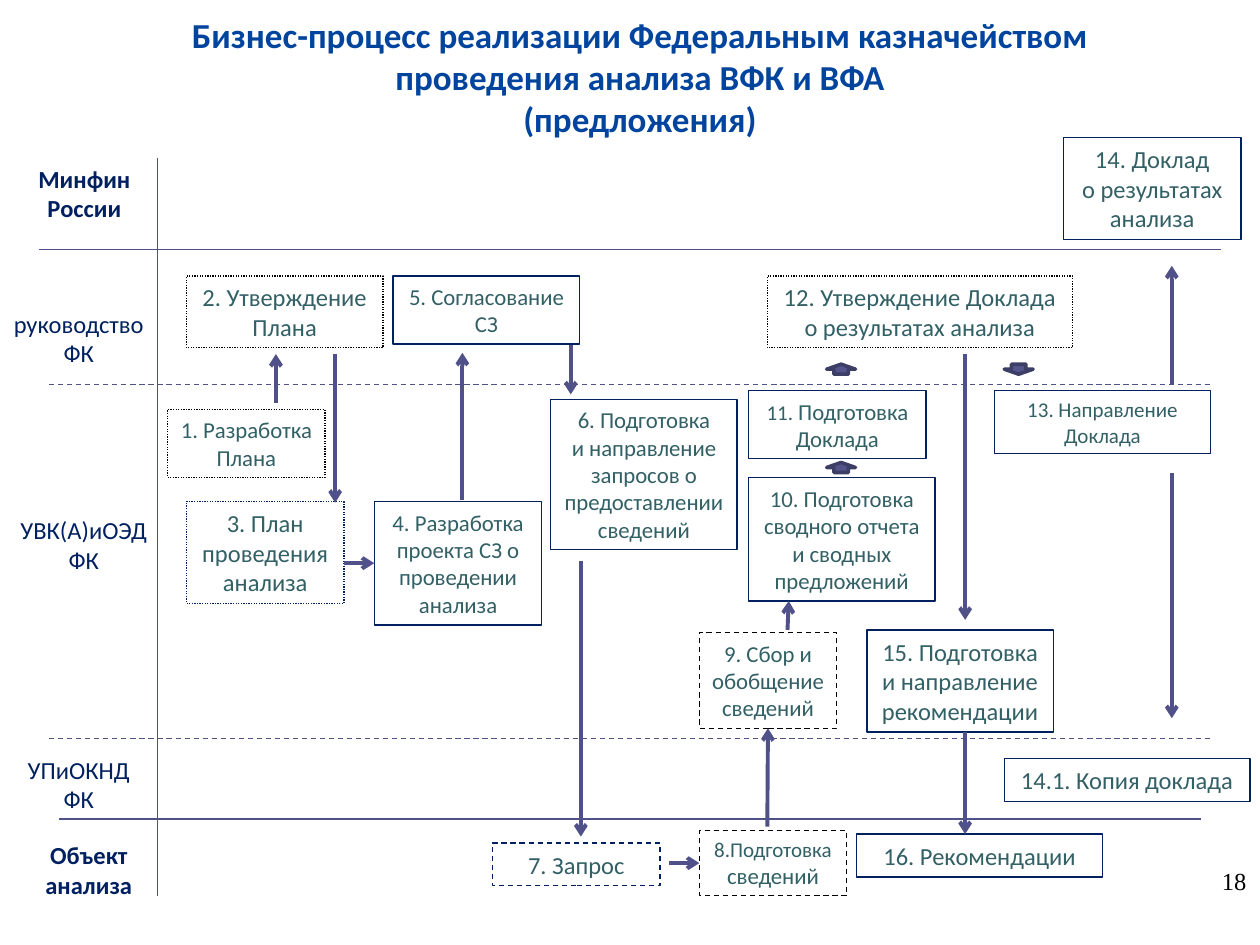
from lxml import etree
from pptx import Presentation
from pptx.dml.color import RGBColor
from pptx.enum import dml, shapes, text
from pptx.oxml.ns import qn
from pptx.util import Inches, Pt

TITLE, NAVY, TEAL, BLACK = "00449E", "002060", "326065", "000000"
LINE, ARROW_FILL, ARROW_EDGE = "505188", "53548A", "3D3E66"
DASH, DOT = dml.MSO_LINE.DASH, dml.MSO_LINE.ROUND_DOT
LEFT_SIDE, BOTTOM_SIDE = 1, 2


def rgb(value):
    return RGBColor.from_string(value)


def set_line(line, color, width, dash=None):
    line.color.rgb = rgb(color)
    line.width = Pt(width)
    if dash:
        line.dash_style = dash


def write(shape, words, size, color, bold=False, font="Calibri",
          align=text.PP_ALIGN.CENTER, anchor=text.MSO_ANCHOR.TOP):
    frame = shape.text_frame
    frame.word_wrap = True
    frame.vertical_anchor = anchor
    frame.text = words
    for paragraph in frame.paragraphs:
        paragraph.alignment = align
        for run in paragraph.runs:
            run.font.name = font
            run.font.size = Pt(size)
            run.font.bold = bold
            run.font.color.rgb = rgb(color)


def add_label(slide, box, words, size, color, **options):
    label = slide.shapes.add_textbox(*map(Inches, box))
    write(label, words, size, color, **options)
    return label


def add_line(slide, start, end, width=0.75, dash=None, arrow=False):
    line = slide.shapes.add_connector(
        shapes.MSO_CONNECTOR.STRAIGHT, *map(Inches, (*start, *end)))
    set_line(line.line, LINE, width, dash)
    if arrow:
        etree.SubElement(line.line._get_or_add_ln(), qn("a:tailEnd"), type="arrow")
    etree.SubElement(line._element.spPr, qn("a:effectLst"))
    return line


def add_header(slide, box):
    add_label(slide, box,
              "Бизнес-процесс реализации Федеральным казначейством "
              "проведения анализа ВФК и ВФА\v(предложения)",
              20, TITLE, bold=True)


def add_lanes(slide, box):
    left, top, width, height = box
    # Lane names: left, top, width, words, bold
    names = [
        (0.16, 0, 1.02, "Минфин России", True),
        (0, 1.15, 1.25, "руководство ФК", False),
        (0, 2.79, 1.33, "УВК(А)иОЭД ФК", False),
        (0, 4.69, 1.25, "УПиОКНД ФК", False),
        (0.16, 5.37, 1.09, "Объект анализа", True),
    ]
    for x, y, name_width, words, bold in names:
        add_label(slide, (left + x, top + y, name_width, 0.57),
                  words, 14, NAVY, bold=bold)
    # Lane borders: inset from both sides, height, dash
    add_line(slide, (left + 1.25, top), (left + 1.25, top + height))
    for inset, y, dash in [(0.31, 0.73, None), (0.39, 1.8, DASH),
                           (0.39, 4.61, DASH), (0.47, 5.25, None)]:
        add_line(slide, (left + inset, top + y),
                 (left + width - inset, top + y), dash=dash)


def add_steps(slide, box):
    left, top = box[:2]
    # Steps: key, left, top, width, height, words, size, border, dash
    steps = [
        ("1", 1.33, 2.25, 1.25, 0.54, "1. Разработка Плана", 13, BLACK, DOT),
        ("2", 1.48, 1.19, 1.56, 0.57, "2. Утверждение\nПлана", 14, BLACK, DOT),
        ("3", 1.48, 2.98, 1.25, 0.81, "3. План проведения анализа", 14, NAVY, DOT),
        ("4", 2.97, 2.98, 1.33, 0.98,
         "4. Разработка проекта СЗ о проведении анализа", 13, NAVY, None),
        ("5", 3.12, 1.19, 1.48, 0.54, "5. Согласование СЗ", 13, NAVY, None),
        ("6", 4.37, 2.17, 1.48, 1.19,
         "6. Подготовка\vи направление запросов о\vпредоставлении сведений",
         13, NAVY, None),
        ("7", 3.91, 5.69, 1.33, 0.34, "7. Запрос", 14, NAVY, DASH),
        ("8", 5.55, 5.59, 1.17, 0.52, "8.Подготовка\nсведений", 13, BLACK, DASH),
        ("9", 5.55, 4.02, 1.09, 0.76, "9. Сбор и обобщение сведений", 13, BLACK, DASH),
        ("10", 5.94, 2.79, 1.48, 0.98,
         "10. Подготовка\nсводного отчета\vи сводных предложений", 13, NAVY, None),
        ("11", 5.94, 2.1, 1.41, 0.54, "11. Подготовка Доклада", 13, NAVY, None),
        ("12", 6.09, 1.19, 2.42, 0.57,
         "12. Утверждение Доклада о результатах анализа", 14, BLACK, DOT),
        ("13", 7.89, 2.1, 1.72, 0.5, "13. Направление Доклада", 12, NAVY, None),
        ("14", 8.44, 0.09, 1.41, 0.81, "14. Доклад\nо результатах анализа", 14, NAVY, None),
        ("14.1", 7.97, 5.02, 1.95, 0.34, "14.1. Копия доклада", 14, NAVY, None),
        ("15", 6.88, 4, 1.48, 0.81,
         "15. Подготовка\nи направление рекомендации", 14, NAVY, None),
        ("16", 6.8, 5.62, 1.95, 0.34, "16. Рекомендации", 14, NAVY, None),
    ]
    placed = {}
    for key, x, y, width, height, words, size, border, dash in steps:
        step = slide.shapes.add_shape(
            shapes.MSO_SHAPE.RECTANGLE,
            *map(Inches, (left + x, top + y, width, height)))
        step.shadow.inherit = False
        step.fill.background()
        set_line(step.line, border, 0.75, dash)
        write(step, words, size, TEAL, anchor=text.MSO_ANCHOR.MIDDLE)
        placed[key] = step
    # Smaller lead-ins in steps 8 and 11
    placed["8"].text_frame.paragraphs[0].runs[0].font.size = Pt(12)
    lead = placed["11"].text_frame.paragraphs[0]
    lead.runs[0].text = "11."
    rest = lead.add_run()
    rest.text = " Подготовка Доклада"
    rest.font.name, rest.font.size = "Calibri", Pt(13)
    rest.font.color.rgb = rgb(TEAL)
    lead.runs[0].font.size = Pt(12)
    return placed


def add_flow(slide, box, steps):
    left, top = box[:2]
    # Arrows: start, end, joined step and side
    arrows = [
        ((2.19, 2.2), (2.19, 1.81), None),
        ((2.66, 1.81), (2.66, 2.99), None),
        ((2.73, 3.47), (2.97, 3.47), ("4", LEFT_SIDE)),
        ((3.67, 2.97), (3.67, 1.8), None),
        ((4.53, 1.74), (4.53, 2.13), None),
        ((4.61, 3.45), (4.61, 5.64), None),
        ((5.31, 5.85), (5.55, 5.85), ("8", LEFT_SIDE)),
        ((6.09, 5.56), (6.09, 4.78), ("9", BOTTOM_SIDE)),
        ((6.25, 4), (6.26, 3.77), None),
        ((7.66, 1.81), (7.66, 3.92), None),
        ((7.66, 4.81), (7.66, 5.62), None),
        ((9.3, 2.05), (9.3, 1.11), None),
        ((9.3, 2.75), (9.3, 4.7), None),
    ]
    for (x1, y1), (x2, y2), joint in arrows:
        arrow = add_line(slide, (left + x1, top + y1), (left + x2, top + y2),
                         width=2.25, arrow=True)
        if joint:
            key, side = joint
            arrow.end_connect(steps[key], side)
    # Block arrows: left, top, rotation
    for x, y, rotation in [(6.56, 1.89, 180), (7.97, 1.89, 0), (6.56, 2.67, 180)]:
        block = slide.shapes.add_shape(
            shapes.MSO_SHAPE.DOWN_ARROW,
            *map(Inches, (left + x, top + y, 0.23, 0.08)))
        block.rotation = rotation
        block.shadow.inherit = False
        block.fill.solid()
        block.fill.fore_color.rgb = rgb(ARROW_FILL)
        set_line(block.line, ARROW_EDGE, 2)


def main():
    presentation = Presentation()
    presentation.slide_width, presentation.slide_height = Inches(10), Inches(7.5)
    slide = presentation.slides.add_slide(presentation.slide_layouts[6])
    add_header(slide, (1.25, 0.06, 7.66, 1.11))
    add_lanes(slide, (0, 1.25, 10, 5.86))
    diagram = (0, 1, 10, 6.11)
    steps = add_steps(slide, diagram)
    add_flow(slide, diagram, steps)
    # Page number
    add_label(slide, (9.52, 6.82, 0.47, 0.52), "18", 14, BLACK,
              font="Times New Roman", align=text.PP_ALIGN.RIGHT)
    presentation.save("out.pptx")


if __name__ == "__main__":
    main()
